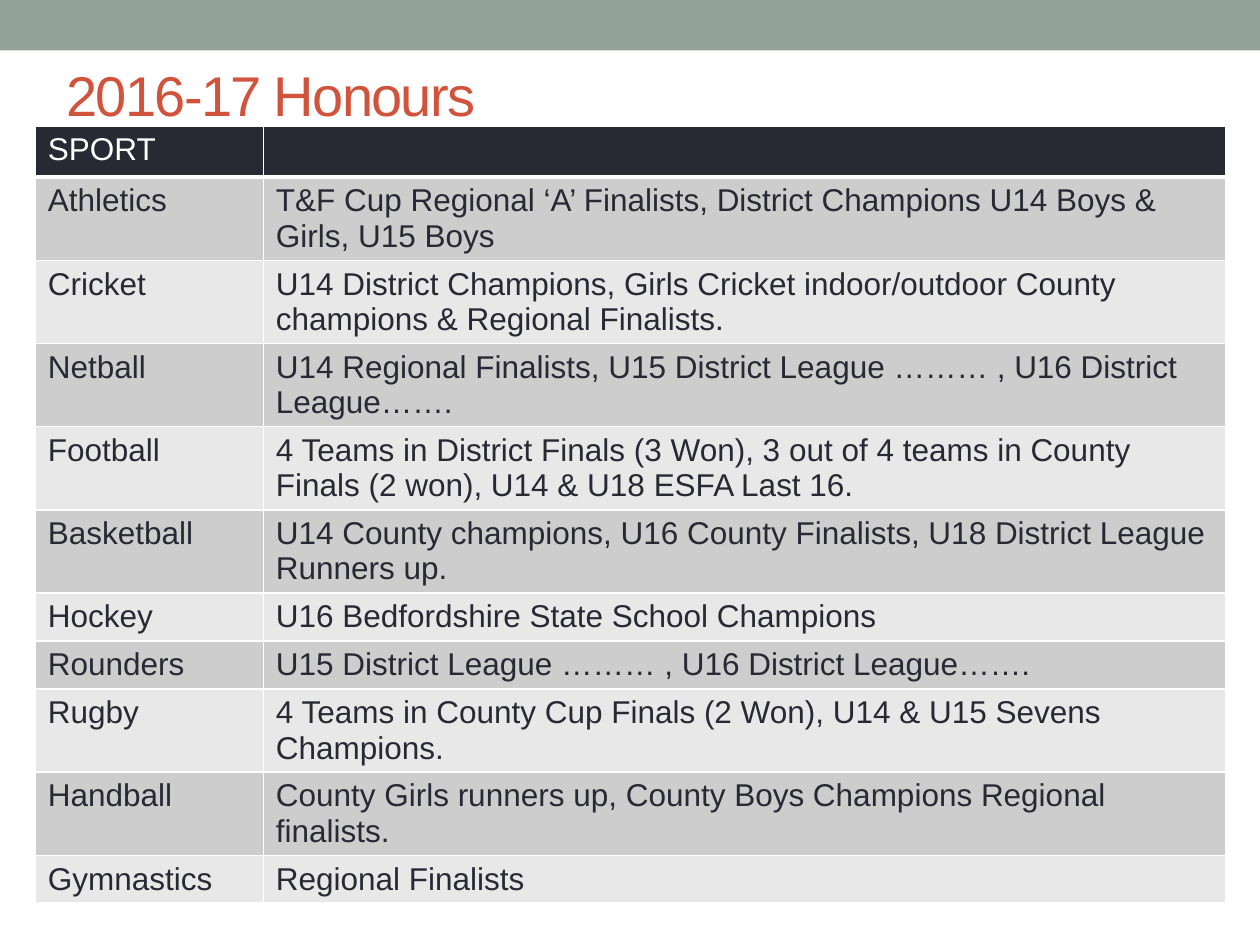
from lxml import etree
from pptx import Presentation
from pptx.dml.color import RGBColor
from pptx.enum.shapes import MSO_SHAPE as Preset
from pptx.enum.text import MSO_ANCHOR as Anchor
from pptx.oxml.ns import qn
from pptx.util import Inches, Pt

TITLE = "2016-17 Honours"
HEADER = ("SPORT", "")
HONOURS = [
    ("Athletics", "T&F Cup Regional ‘A’ Finalists, District Champions U14 Boys & Girls, U15 Boys"),
    ("Cricket", "U14 District Champions, Girls Cricket indoor/outdoor County champions & Regional Finalists."),
    ("Netball", "U14 Regional Finalists, U15 District League ……… , U16 District League……."),
    ("Football", "4 Teams in District Finals (3 Won), 3 out of 4 teams in County Finals (2 won), U14 & U18 ESFA Last 16."),
    ("Basketball", "U14 County champions, U16 County Finalists, U18 District League Runners up."),
    ("Hockey", "U16 Bedfordshire State School Champions"),
    ("Rounders", "U15 District League ……… , U16 District League……."),
    ("Rugby", "4 Teams in County Cup Finals (2 Won), U14 & U15 Sevens Champions."),
    ("Handball", "County Girls runners up, County Boys Champions Regional finalists."),
    ("Gymnastics", "Regional Finalists"),
]
COLUMN_WIDTHS = (1.81, 7.64)
ONE_LINE, TWO_LINES = 0.38, 0.66
LINE_CHARS = 60
DARK, WHITE, SAGE, RED = "292934", "FFFFFF", "93A299", "D2533C"
BANDS = ("CDCDCE", "E8E8E8")
TITLE_FORMAT = {"name": "Arial", "size": Pt(32), "bold": False}
CELL_FORMAT = {"name": "Arial", "size": Pt(18), "bold": False}


def rgb(value):
    return RGBColor.from_string(value)


def apply_font(font, settings, color):
    for name, value in settings.items():
        setattr(font, name, value)
    font.color.rgb = rgb(color)


def add_borders(cell, bottom_width):
    properties = cell._tc.get_or_add_tcPr()
    for side, width in (("L", 1), ("R", 1), ("T", 1), ("B", bottom_width)):
        border = etree.SubElement(properties, qn(f"a:ln{side}"), w=str(Pt(width)))
        solid = etree.SubElement(border, qn("a:solidFill"))
        etree.SubElement(solid, qn("a:srgbClr"), val=WHITE)


def add_banner(slide):
    banner = slide.shapes.add_shape(Preset.RECTANGLE, 0, 0, Inches(10), Inches(0.4))
    banner.shadow.inherit = False
    banner.fill.solid()
    banner.fill.fore_color.rgb = rgb(SAGE)
    banner.line.fill.background()


def add_honours(slide):
    rows = [HEADER, *HONOURS]
    heights = [TWO_LINES if len(honour) > LINE_CHARS else ONE_LINE for _, honour in rows]
    honours = slide.shapes.add_table(
        len(rows), len(COLUMN_WIDTHS), Inches(0.28), Inches(1),
        Inches(sum(COLUMN_WIDTHS)), Inches(sum(heights))).table
    for column, width in zip(honours.columns, COLUMN_WIDTHS):
        column.width = Inches(width)
    for index, (entries, height) in enumerate(zip(rows, heights)):
        honours.rows[index].height = Inches(height)
        is_header = index == 0
        fill = DARK if is_header else BANDS[(index - 1) % 2]
        for position, entry in enumerate(entries):
            cell = honours.cell(index, position)
            add_borders(cell, 3 if is_header else 1)
            cell.fill.solid()
            cell.fill.fore_color.rgb = rgb(fill)
            cell.text = entry
            for run in cell.text_frame.paragraphs[0].runs:
                apply_font(run.font, CELL_FORMAT, WHITE if is_header else DARK)


def add_title(slide):
    frame = slide.shapes.add_textbox(
        Inches(0.43), Inches(0.21), Inches(9), Inches(1.08)).text_frame
    frame.word_wrap = True
    frame.vertical_anchor = Anchor.MIDDLE
    run = frame.paragraphs[0].add_run()
    run.text = TITLE
    apply_font(run.font, TITLE_FORMAT, RED)
    run._r.get_or_add_rPr().set("spc", "-100")


def main():
    deck = Presentation()
    deck.slide_width, deck.slide_height = Inches(10), Inches(7.5)
    slide = deck.slides.add_slide(deck.slide_layouts[6])
    add_banner(slide)
    add_honours(slide)
    add_title(slide)
    deck.save("out.pptx")


if __name__ == "__main__":
    main()
